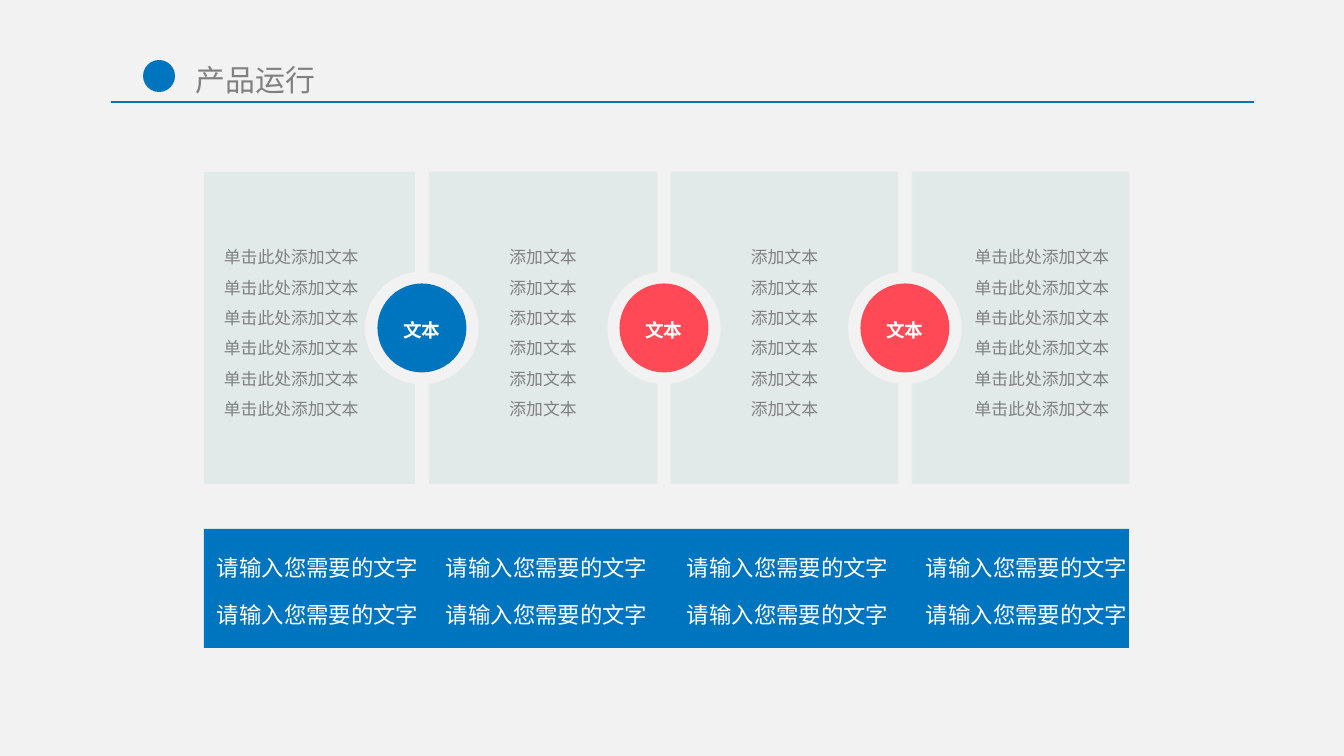
from pptx import Presentation
from pptx.dml.color import RGBColor
from pptx.enum.shapes import MSO_CONNECTOR as Conn, MSO_SHAPE as Shape
from pptx.enum.text import MSO_ANCHOR as Anchor, MSO_AUTO_SIZE as Auto, PP_ALIGN as Align
from pptx.oxml.ns import qn
from pptx.util import Pt
from lxml.etree import SubElement

PX = 914400 / 134.4
BACK = RGBColor(0xF2, 0xF2, 0xF2)
BLUE = RGBColor(0x00, 0x75, 0xBF)
RULE = RGBColor(0x00, 0x72, 0xBB)
RED = RGBColor(0xFF, 0x49, 0x57)
PALE = RGBColor(0xE2, 0xE9, 0xE9)
EDGE = RGBColor(0xEA, 0xEA, 0xEA)
GRAY = RGBColor(0x80, 0x80, 0x80)
WHITE = RGBColor(0xFF, 0xFF, 0xFF)


def px(*nums):
    return [round(n * PX) for n in nums]


def write(shape, lines, size, color, font="Arial", bold=False, align=Align.LEFT,
          space=None, pad=(13, 7, 13, 7), anchor=Anchor.MIDDLE, auto=Auto.NONE):
    """Fill a shape with one paragraph per line; pad is left, top, right, bottom."""
    frame = shape.text_frame
    frame.word_wrap = True
    frame.auto_size = auto
    frame.vertical_anchor = anchor
    (frame.margin_left, frame.margin_top,
     frame.margin_right, frame.margin_bottom) = px(*pad)
    for i, line in enumerate(lines):
        para = frame.add_paragraph() if i else frame.paragraphs[0]
        para.alignment = align
        para.line_spacing = space
        run = para.add_run()
        run.text = line
        run.font.size = Pt(size)
        run.font.name = font
        run.font.bold = bold
        run.font.color.rgb = color


deck = Presentation()
deck.slide_width, deck.slide_height = px(1344, 756)
slide = deck.slides.add_slide(deck.slide_layouts[6])
slide.background.fill.solid()
slide.background.fill.fore_color.rgb = BACK
shapes = slide.shapes
solids = []

# Heading
title = shapes.add_textbox(*px(186, 57, 263, 46))
write(title, ["产品运行"], 16, GRAY, font="Noto Sans CJK SC",
      pad=(10, 5, 10, 5), anchor=Anchor.TOP, auto=Auto.SHAPE_TO_FIT_TEXT)
rule = shapes.add_connector(Conn.STRAIGHT, *px(111, 102, 1254, 102))
rule.line.color.rgb = RULE
rule.line.width = Pt(0.75)
SubElement(rule._element.spPr, qn("a:effectLst"))
solids.append((shapes.add_shape(Shape.OVAL, *px(143, 60, 32, 32)), BLUE))

# Four panels, notched around the circles that sit in the gaps
TOP, BASE, MID = 172, 484, 328
GAP, DOT = 14, 89
# Depth and height of a notch's points: two Bezier curves of three points each
NOTCH = [(0, -56), (28, -53), (50, -29), (50, 0), (50, 29), (28, 53), (0, 56)]
LONG, SHORT = "单击此处添加文本", "添加文本"
panels = [
    (204, 415, [LONG * 4, LONG * 2], Align.LEFT, (20, 7, 50, 7)),
    (429, 657, [SHORT] * 6, Align.CENTER, (50, 7, 50, 7)),
    (671, 898, [SHORT] * 6, Align.CENTER, (50, 7, 50, 7)),
    (912, 1129, [LONG] * 6, Align.RIGHT, (59, 7, 20, 7)),
]
for i, (left, right, lines, align, pad) in enumerate(panels):
    points, bends = [(right, TOP)], []
    if i < 3:
        bends += [len(points) + 1, len(points) + 4]
        points += [(right - x, MID + y) for x, y in NOTCH]
    points += [(right, BASE), (left, BASE)]
    if i > 0:
        bends += [len(points) + 1, len(points) + 4]
        points += [(left + x, MID - y) for x, y in NOTCH]
    pen = shapes.build_freeform(*px(left, TOP))
    pen.add_line_segments([px(*point) for point in points])
    panel = pen.convert_to_shape()
    steps = list(panel._element.iter(qn("a:lnTo")))
    for start in bends:
        first, *others = steps[start:start + 3]
        first.tag = qn("a:cubicBezTo")
        for step in others:
            first.append(step[0])
            step.getparent().remove(step)
    solids.append((panel, PALE))
    write(panel, lines, 9, GRAY, align=align, space=1.5, pad=pad)

for (left, right, *rest), color in zip(panels, (BLUE, RED, RED)):
    dot = shapes.add_shape(
        Shape.OVAL, *px(right + GAP / 2 - DOT / 2, MID - DOT / 2, DOT, DOT))
    solids.append((dot, color))
    write(dot, ["文本"], 10, WHITE, bold=True, align=Align.CENTER,
          space=1.2, pad=(0, 0, 0, 0))

# Bottom band
solids.append((shapes.add_shape(Shape.RECTANGLE, *px(204, 529, 925, 119)), BLUE))
for y in (547, 594):
    for x in (204, 433, 674, 913):
        label = shapes.add_textbox(*px(x, y, 374, 42))
        write(label, ["请输入您需要的文字"], 12, WHITE,
              anchor=Anchor.TOP, auto=Auto.SHAPE_TO_FIT_TEXT)

for shape, color in solids:
    shape.shadow.inherit = False
    shape.fill.solid()
    shape.fill.fore_color.rgb = color
    shape.line.fill.background()

# The first panel stays without an outline
for panel in [shape for shape, color in solids if color == PALE][1:]:
    panel.line.color.rgb = EDGE
    panel.line.width = Pt(0.25)

deck.save("out.pptx")
